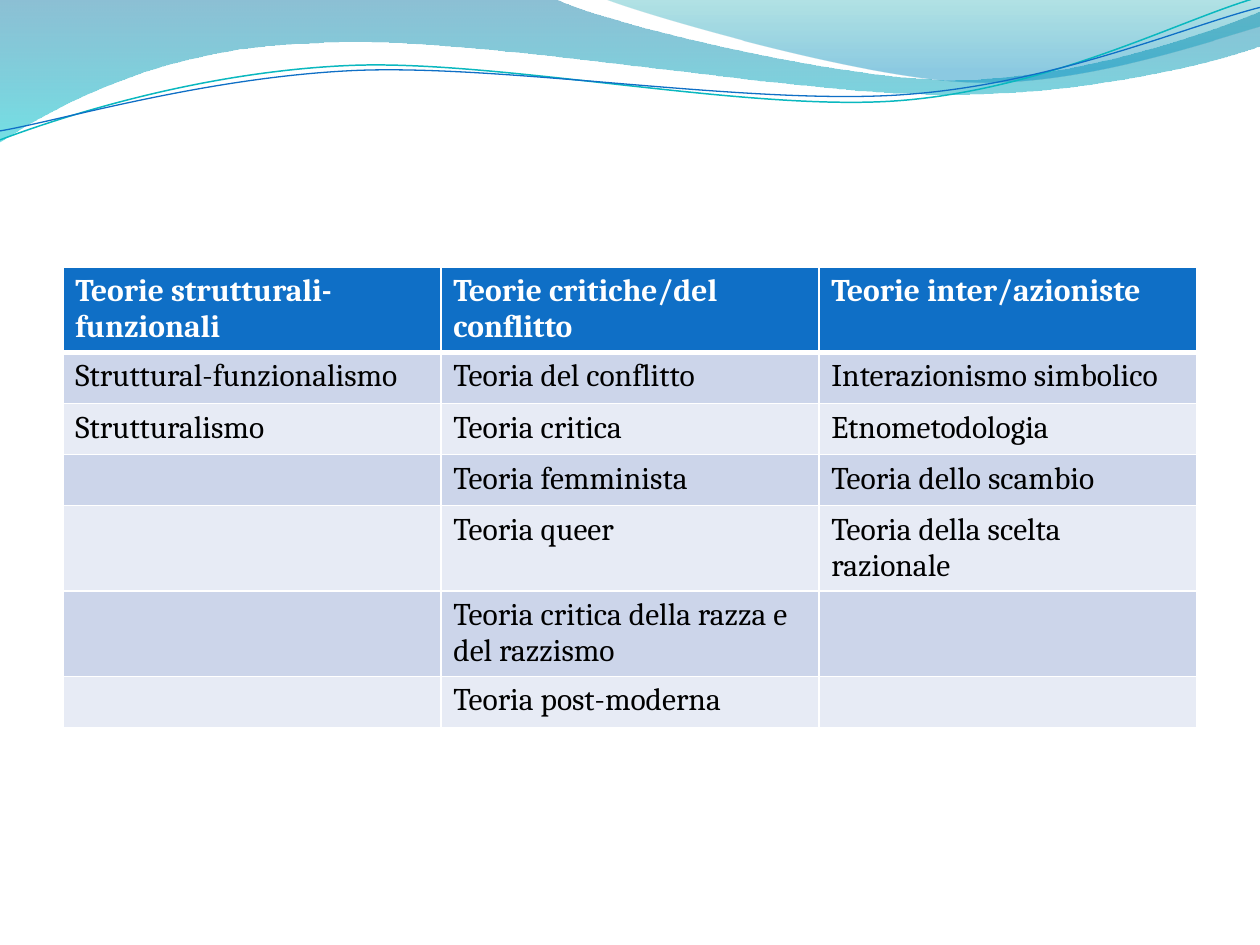
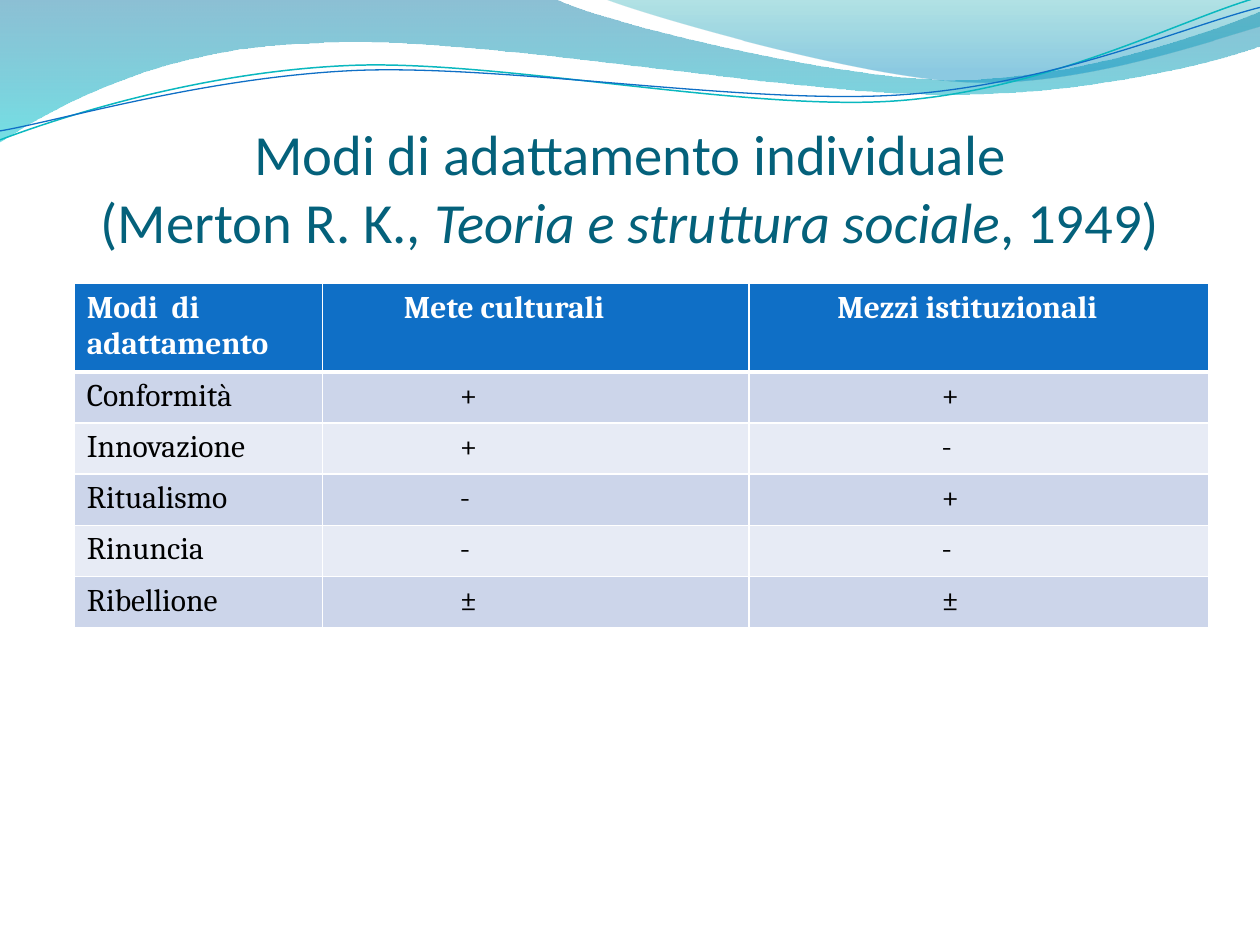
from dataclasses import dataclass
from math import cos, radians, sin

from lxml.etree import SubElement
from pptx import Presentation
from pptx.dml.color import RGBColor
from pptx.enum.text import MSO_ANCHOR, PP_ALIGN
from pptx.oxml import parse_xml
from pptx.oxml.ns import nsdecls, qn
from pptx.slide import Slide
from pptx.util import Cm, Pt

WHITE = RGBColor(0xFF, 0xFF, 0xFF)
BLACK = RGBColor(0x00, 0x00, 0x00)
BLUE = RGBColor(0x0F, 0x6F, 0xC6)
TEAL = RGBColor(0x0A, 0xB8, 0xBF)
INK = RGBColor(0x04, 0x61, 0x7B)
BANDS = (RGBColor(0xCC, 0xD5, 0xEA), RGBColor(0xE7, 0xEB, 0xF5))
HEAD_FONT, BODY_FONT = "Calibri", "Cambria"
ROW, INSET = 1.03, 0.25
TILT = -2.7  # degrees, thin lines

Point = tuple[float, float]


@dataclass(frozen=True)
class Stop:
    place: float
    color: RGBColor
    alpha: int


@dataclass(frozen=True)
class Wave:
    """Each move holds one point (line) or three points (Bézier curve), in cm."""
    start: Point
    moves: list[list[Point]]
    stops: tuple[Stop, ...] = ()
    color: RGBColor = BLUE
    width: float = 0.75
    pivot: Point = (0, 0)


@dataclass(frozen=True)
class Grid:
    left: float
    top: float
    height: float
    head: float
    cols: list[float]
    rows: list[list[str]]
    head_pad: tuple[float, ...] = (0, 0, 0)
    body_pad: tuple[float, ...] = (0, 0, 0)


WAVES = [
    # Wide band
    Wave((0, 0), [
        [(11.18, -0.03)],
        [(12.09, 0.43), (16.87, 1.6), (19.25, 1.6)],
        [(21.67, 1.6), (24.33, 0.66), (25.4, 0.23)],
        [(25.43, 0.91)],
        [(24.97, 1.12), (22.1, 1.93), (18.95, 1.9)],
        [(15.8, 1.9), (9.7, 0.71), (6.53, 0.86)],
        [(3.28, 0.91), (1.17, 2.11), (-0.03, 2.87)],
        [(0, 0)],
    ], (Stop(0, RGBColor(0x00, 0x74, 0xA1), 45),
        Stop(1, RGBColor(0x00, 0xC6, 0xCF), 55))),
    # Right band
    Wave((12.17, -0.03), [
        [(12.93, 0.28), (17.32, 1.57), (19.53, 1.65)],
        [(21.74, 1.75), (24.41, 0.81), (25.4, 0.53)],
        [(25.4, 0)],
        [(12.17, -0.03)],
    ], (Stop(0, RGBColor(0x00, 0xA1, 0xA9), 30),
        Stop(0.8, RGBColor(0x00, 0x8B, 0xBF), 45))),
    # Thin lines
    Wave((0, 2.82), [
        [(1.22, 2.36), (4.01, 1.45), (7.04, 1.32)],
        [(10.03, 1.19), (15.06, 2.26), (18.11, 2.03)],
        [(21.16, 1.8), (23.83, 0.38), (25.35, -0.05)],
    ], color=TEAL, width=0.85, pivot=(12.67, 1.46)),
    Wave((0, 2.64), [
        [(1.19, 2.44), (4.17, 1.55), (7.19, 1.42)],
        [(10.24, 1.3), (15.16, 2.13), (18.21, 1.91)],
        [(21.23, 1.7), (23.9, 0.53), (25.4, 0.15)],
    ], pivot=(12.69, 1.5)),
]

THEORIES = Grid(1.27, 5.38, 9.45, ROW, [7.62] * 3, [
    ["Teorie strutturali-funzionali", "Teorie critiche/del conflitto", "Teorie inter/azioniste"],
    ["Struttural-funzionalismo", "Teoria del conflitto", "Interazionismo simbolico"],
    ["Strutturalismo", "Teoria critica", "Etnometodologia"],
    ["", "Teoria femminista", "Teoria dello scambio"],
    ["", "Teoria queer", "Teoria della scelta razionale"],
    ["", "Teoria critica della razza e del razzismo", ""],
    ["", "Teoria post-moderna", ""],
])

MODES = Grid(1.5, 5.72, 6.93, 0.98, [5, 8.6, 9.26], [
    ["Modi  di adattamento", "Mete culturali", "Mezzi istituzionali"],
    ["Conformità", "+", "+"],
    ["Innovazione", "+", "-"],
    ["Ritualismo", "-", "+"],
    ["Rinuncia", "-", "-"],
    ["Ribellione", "±", "±"],
], (0, 1.39, 1.53), (0, 2.52, 3.63))

TITLE = [
    [("Modi di adattamento individuale", False)],
    [("(Merton R. K., ", False), ("Teoria e struttura sociale", True), (", 1949)", False)],
]


def level(point: Point, pivot: Point) -> Point:
    """Undo the tilt of a thin line around its middle."""
    turn = radians(-TILT)
    x, y = point[0] - pivot[0], point[1] - pivot[1]
    return (pivot[0] + x * cos(turn) - y * sin(turn),
            pivot[1] + x * sin(turn) + y * cos(turn))


def bend(shape, moves: list[list[Point]]) -> None:
    """Join each three line steps of a curve into one Bézier step."""
    steps = iter(list(shape._element.iter(qn("a:lnTo"))))
    for move in moves:
        group = [next(steps) for _ in move]
        if len(group) == 1:
            continue
        curve = parse_xml(f'<a:cubicBezTo {nsdecls("a")}/>')
        group[0].addprevious(curve)
        for step in group:
            curve.append(step[0])
            step.getparent().remove(step)


def add_wave(slide: Slide, wave: Wave) -> None:
    chain = [wave.start] + [point for move in wave.moves for point in move]
    if not wave.stops:
        chain = [level(point, wave.pivot) for point in chain]
    first, *rest = [(Cm(x), Cm(y)) for x, y in chain]
    pen = slide.shapes.build_freeform(*first)
    pen.add_line_segments(rest, close=bool(wave.stops))
    shape = pen.convert_to_shape()
    bend(shape, wave.moves)
    shape.shadow.inherit = False
    if not wave.stops:
        shape.rotation = TILT
        shape.fill.background()
        shape.line.color.rgb = wave.color
        shape.line.width = Pt(wave.width)
        return
    shape.line.fill.background()
    shape.fill.gradient()
    shape.fill.gradient_angle = 270
    for spot, stop in zip(shape.fill.gradient_stops, wave.stops):
        spot.position = stop.place
        spot.color.rgb = stop.color
    tints = shape._element.spPr.iter(qn("a:srgbClr"))
    for tint, stop in zip(tints, wave.stops):
        SubElement(tint, qn("a:alpha")).set("val", str(stop.alpha * 1000))


def add_title(slide: Slide) -> None:
    frame = slide.shapes.add_textbox(Cm(1.27), Cm(1.96), Cm(22.86), Cm(3.17)).text_frame
    frame.word_wrap = True
    frame.vertical_anchor = MSO_ANCHOR.BOTTOM
    frame.margin_left = frame.margin_right = frame.margin_bottom = 0
    para = frame.paragraphs[0]
    para.alignment = PP_ALIGN.CENTER
    para.font.name, para.font.size = HEAD_FONT, Pt(32.4)
    para.font.color.rgb = INK
    for at, line in enumerate(TITLE):
        if at:
            para.add_line_break()
        for text, slant in line:
            run = para.add_run()
            run.text = text
            if slant:
                run.font.italic = True


def set_edges(cell, row: int) -> None:
    """Give a cell white borders, thick below the header."""
    props = cell._tc.get_or_add_tcPr()
    for at, side in enumerate("LRTB"):
        width = 3 if side == "B" and row == 0 else 1
        props.insert(at, parse_xml(
            f'<a:ln{side} {nsdecls("a")} w="{Pt(width)}"><a:solidFill>'
            f'<a:srgbClr val="{WHITE}"/></a:solidFill></a:ln{side}>'))


def add_grid(slide: Slide, grid: Grid) -> None:
    frame = slide.shapes.add_table(
        len(grid.rows), len(grid.cols), Cm(grid.left), Cm(grid.top),
        Cm(sum(grid.cols)), Cm(grid.height))
    table = frame.table
    for col, width in zip(table.columns, grid.cols):
        col.width = Cm(width)
    for r, texts in enumerate(grid.rows):
        table.rows[r].height = Cm(ROW if r else grid.head)
        pads = grid.body_pad if r else grid.head_pad
        for c, (text, pad) in enumerate(zip(texts, pads)):
            cell = table.cell(r, c)
            cell.margin_left = Cm(INSET + pad)
            cell.fill.solid()
            cell.fill.fore_color.rgb = BANDS[(r - 1) % 2] if r else BLUE
            set_edges(cell, r)
            if not text:
                continue
            cell.text = text
            font = cell.text_frame.paragraphs[0].font
            font.name, font.size, font.bold = BODY_FONT, Pt(18), r == 0
            font.color.rgb = BLACK if r else WHITE
    frame.height = Cm(grid.height)


def add_slide(deck) -> Slide:
    """Add a blank slide with the shared waves."""
    slide = deck.slides.add_slide(deck.slide_layouts[6])
    for wave in WAVES:
        add_wave(slide, wave)
    return slide


def main() -> None:
    deck = Presentation()
    deck.slide_width, deck.slide_height = Cm(25.4), Cm(19.05)

    # Theory families
    add_grid(add_slide(deck), THEORIES)

    # Modes of adaptation
    slide = add_slide(deck)
    add_title(slide)
    add_grid(slide, MODES)

    deck.save("out.pptx")


if __name__ == "__main__":
    main()
